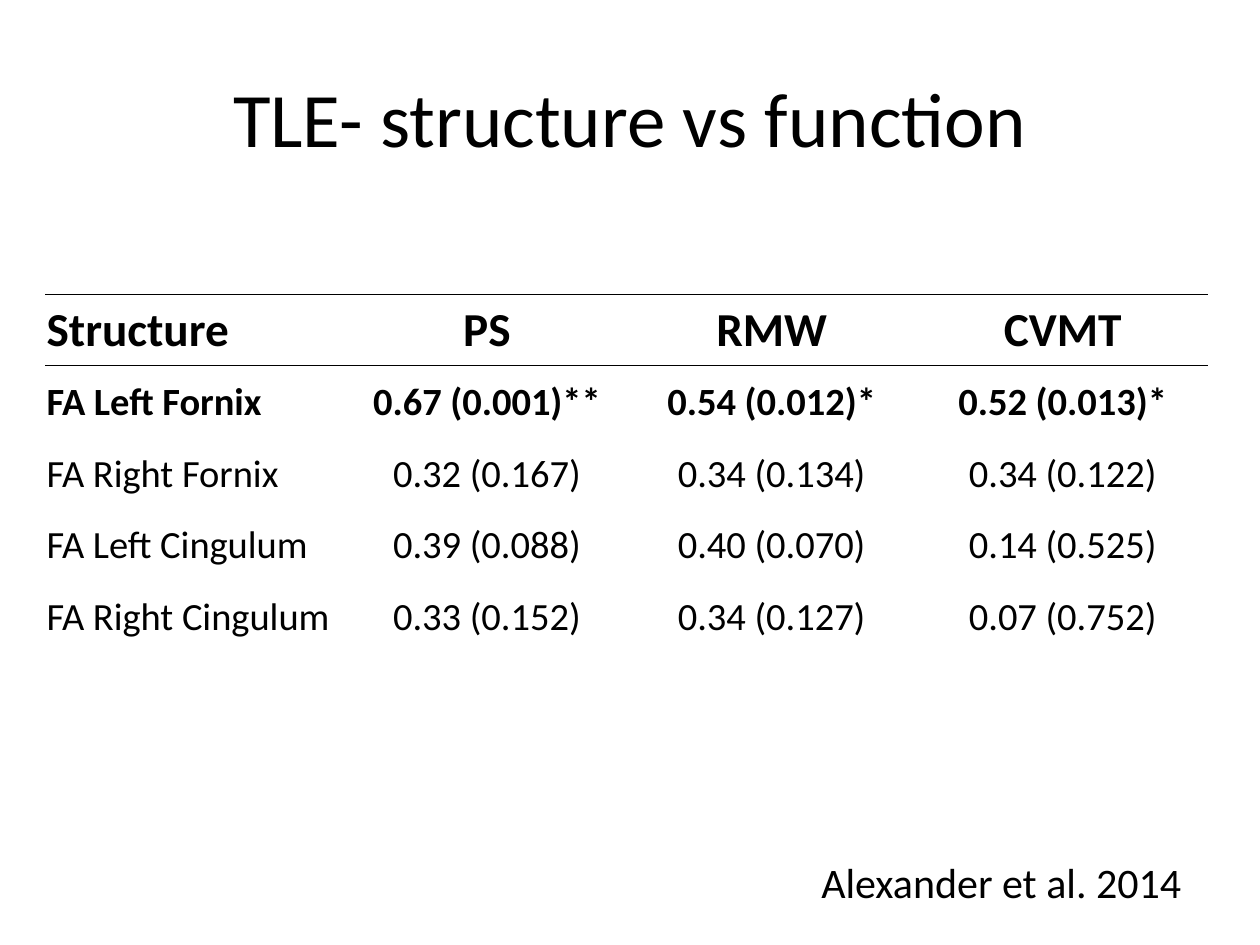
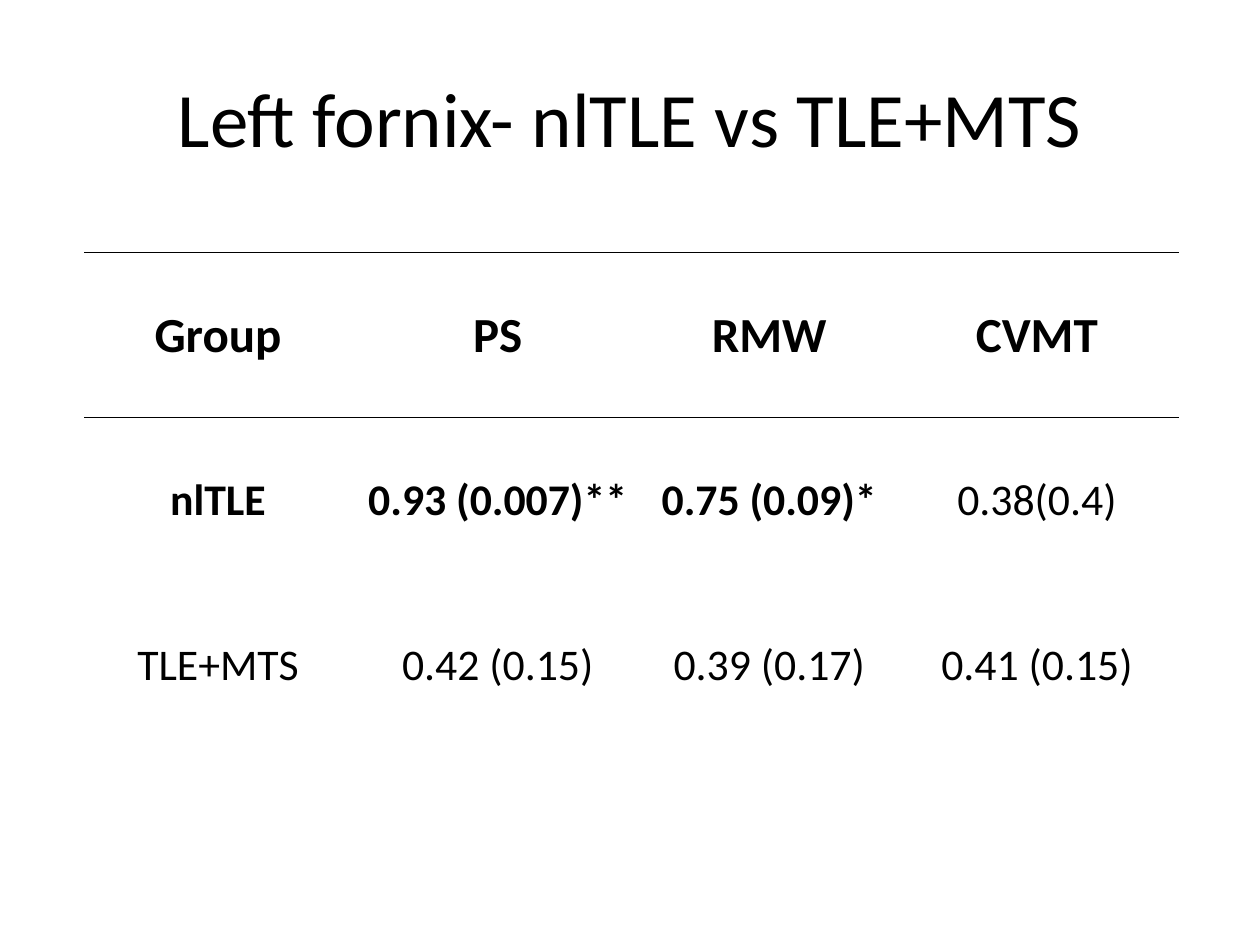
import pptx
import pptx.util
import pptx.dml.color
import pptx.enum.text
import pptx.oxml
import pptx.oxml.ns

WIDE, HIGH = 10, 7.5
FONT = "Calibri"
COLORS = {"ink": "000000", "page": "FFFFFF"}
INCH = pptx.util.Inches
ALIGN = pptx.enum.text.PP_ALIGN
MIDDLE = pptx.enum.text.MSO_ANCHOR.MIDDLE


def style(para, size, bold=False, align=ALIGN.LEFT):
    para.alignment = align
    for run in para.runs:
        run.font.name = FONT
        run.font.size = pptx.util.Pt(size)
        run.font.bold = bold
        run.font.color.rgb = pptx.dml.color.RGBColor.from_string(COLORS["ink"])


def add_text(slide, text, place, size, align=ALIGN.LEFT, anchor=None):
    left, top, width, height = place
    box = slide.shapes.add_textbox(
        INCH(left * WIDE), INCH(top * HIGH), INCH(width * WIDE), INCH(height * HIGH))
    frame = box.text_frame
    frame.word_wrap = True
    frame.vertical_anchor = anchor
    frame.text = text
    style(frame.paragraphs[0], size, align=align)


def add_page(deck, title):
    slide = deck.slides.add_slide(deck.slide_layouts[6])
    fill = slide.background.fill
    fill.solid()
    fill.fore_color.rgb = pptx.dml.color.RGBColor.from_string(COLORS["page"])
    add_text(slide, title, (0.05, 0.04, 0.9, 1 / 6), 44, ALIGN.CENTER, MIDDLE)
    return slide


def rule_cell(cell, ruled):
    props = cell._tc.get_or_add_tcPr()
    space = pptx.oxml.ns.nsdecls("a")
    for side in "LRTB":
        paint = "<a:noFill/>"
        if side in ruled:
            paint = f'<a:solidFill><a:srgbClr val="{COLORS["ink"]}"/></a:solidFill>'
        props.append(pptx.oxml.parse_xml(
            f'<a:ln{side} {space} w="6350">{paint}</a:ln{side}>'))


def add_stats(slide, rows, spot, widths, height, sizes, strong, first):
    left, top = spot
    frame = slide.shapes.add_table(
        len(rows), len(widths), INCH(left * WIDE), INCH(top * HIGH),
        INCH(sum(widths)), INCH(height * len(rows)))
    table = frame.table
    table.first_row = table.horz_banding = False
    for col, width in zip(table.columns, widths):
        col.width = INCH(width)
    for r, texts in enumerate(rows):
        table.rows[r].height = INCH(height)
        for c, text in enumerate(texts):
            cell = table.cell(r, c)
            cell.text = text
            cell.vertical_anchor = MIDDLE
            cell.margin_left = cell.margin_right = cell.margin_top = INCH(0.01)
            cell.margin_bottom = 0
            rule_cell(cell, {0: "TB", 1: "T"}.get(r, ""))
            cell.fill.background()
            bold = r == 0 or (r == 1 and c < strong)
            style(cell.text_frame.paragraphs[0], sizes[min(r, 1)], bold,
                  first if c == 0 else ALIGN.CENTER)


def main():
    deck = pptx.Presentation()
    deck.slide_width, deck.slide_height = INCH(WIDE), INCH(HIGH)
    tests = ["PS", "RMW", "CVMT"]

    slide = add_page(deck, "TLE- structure vs function")
    add_stats(slide, [
        ["Structure", *tests],
        ["FA Left Fornix", "0.67 (0.001)**", "0.54 (0.012)*", "0.52 (0.013)*"],
        ["FA Right Fornix", "0.32 (0.167)", "0.34 (0.134)", "0.34 (0.122)"],
        ["FA Left Cingulum", "0.39 (0.088)", "0.40 (0.070)", "0.14 (0.525)"],
        ["FA Right Cingulum", "0.33 (0.152)", "0.34 (0.127)", "0.07 (0.752)"],
    ], (0.036, 0.311), (2.4, 2.21, 2.31, 2.31), 0.57, (27, 22), 4, ALIGN.LEFT)
    add_text(slide, "Alexander et al. 2014", (0.642, 0.9, 0.33, 0.067), 24)

    slide = add_page(deck, "Left fornix- nlTLE vs TLE+MTS")
    add_stats(slide, [
        ["Group", *tests],
        ["nlTLE", "0.93 (0.007)**", "0.75 (0.09)*", "0.38(0.4)"],
        ["TLE+MTS", "0.42 (0.15)", "0.39 (0.17)", "0.41 (0.15)"],
    ], (0.067, 0.267), (2.12, 2.32, 1.99, 2.26), 1.31, (28, 25), 3, ALIGN.CENTER)

    deck.save("out.pptx")


if __name__ == "__main__":
    main()
